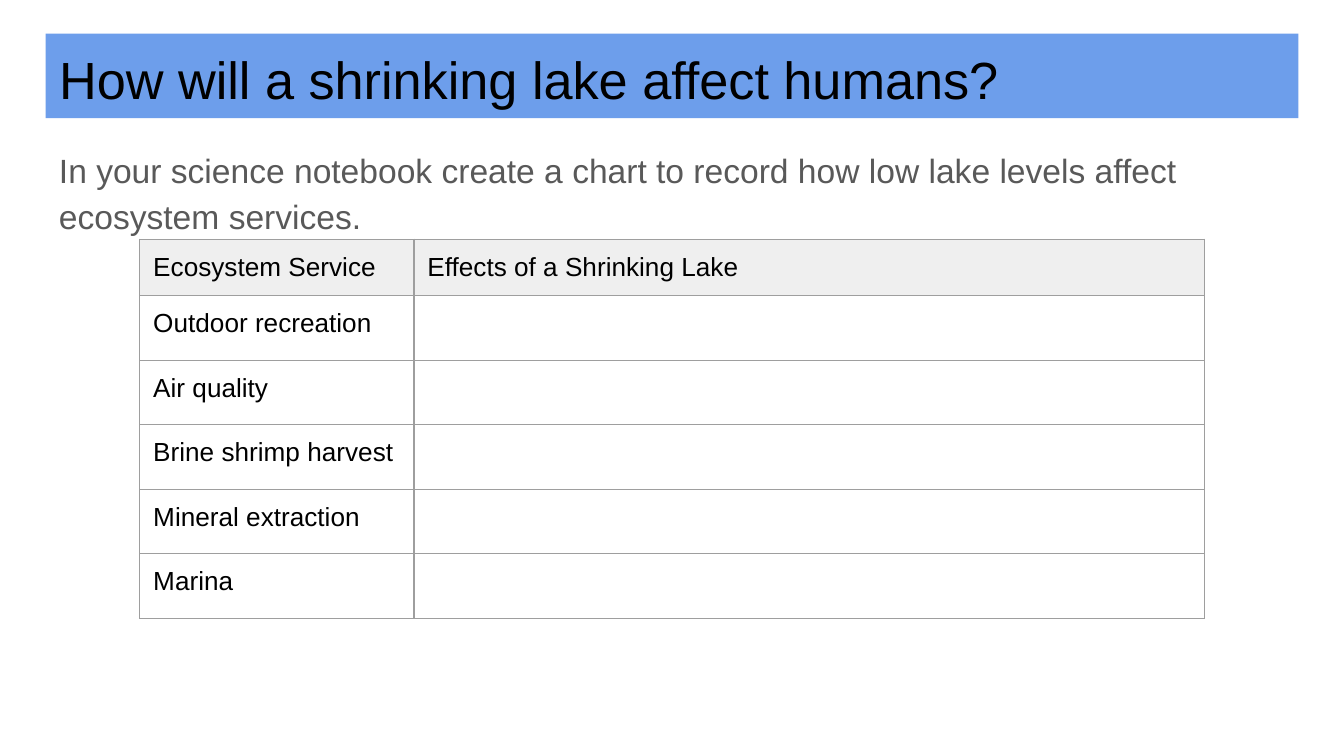
from dataclasses import dataclass

from lxml import etree
from pptx import Presentation
from pptx.dml.color import RGBColor
from pptx.enum.text import MSO_ANCHOR, MSO_AUTO_SIZE, PP_ALIGN
from pptx.oxml.ns import qn
from pptx.util import Inches, Pt

TOP = MSO_ANCHOR.TOP
NO_AUTOFIT = MSO_AUTO_SIZE.NONE
LEFT = PP_ALIGN.LEFT
TITLE_ONLY = 5


@dataclass(frozen=True)
class Theme:
    font: str = "Arial"
    black: str = "000000"
    grey: str = "595959"
    banner: str = "6D9EEB"
    header: str = "EFEFEF"
    border: str = "9E9E9E"
    title_size: int = 28
    body_size: int = 18
    cell_size: int = 14
    border_width: float = 0.75
    padding: float = 0.1


THEME = Theme()
SLIDE_WIDTH = Inches(10)
SLIDE_HEIGHT = SLIDE_WIDTH * 9 // 16
MARGIN = 0.34
CONTENT_WIDTH = 9.32
COLUMN_WIDTHS = (2.04, 5.88)
HEADER_HEIGHT = 0.42
ROW_HEIGHT = 0.48
HEADINGS = ("Ecosystem Service", "Effects of a Shrinking Lake")
SERVICES = (
    "Outdoor recreation",
    "Air quality",
    "Brine shrimp harvest",
    "Mineral extraction",
    "Marina",
)


def write_text(frame, text, *, size, color=THEME.black, line_spacing=1.0, space_after=0):
    """Put one formatted paragraph into a text frame."""
    paragraph = frame.paragraphs[0]
    paragraph.alignment = LEFT
    paragraph.line_spacing = line_spacing
    paragraph.space_after = Pt(space_after)
    run = paragraph.add_run()
    run.text = text
    run.font.name = THEME.font
    run.font.size = Pt(size)
    run.font.color.rgb = RGBColor.from_string(color)


def pad(target):
    """Give a text frame or a table cell equal margins and top alignment."""
    target.margin_left = target.margin_right = Inches(THEME.padding)
    target.margin_top = target.margin_bottom = Inches(THEME.padding)
    target.vertical_anchor = TOP


def prepare_frame(frame):
    pad(frame)
    frame.word_wrap = True
    frame.auto_size = NO_AUTOFIT


def add_title(slide, text):
    title = slide.shapes.title
    title.left, title.top = Inches(MARGIN), Inches(0.25)
    title.width, title.height = Inches(CONTENT_WIDTH), Inches(0.63)
    title.fill.solid()
    title.fill.fore_color.rgb = RGBColor.from_string(THEME.banner)
    prepare_frame(title.text_frame)
    write_text(title.text_frame, text, size=THEME.title_size)


def add_instruction(slide, text):
    box = slide.shapes.add_textbox(
        Inches(MARGIN), Inches(0.97), Inches(CONTENT_WIDTH), Inches(4.16)
    )
    prepare_frame(box.text_frame)
    write_text(box.text_frame, text, size=THEME.body_size, color=THEME.grey,
               line_spacing=1.15, space_after=16)


def set_borders(cell):
    """Draw all four cell edges; they must come before the fill in the XML."""
    properties = cell._tc.get_or_add_tcPr()
    for index, edge in enumerate(("a:lnL", "a:lnR", "a:lnT", "a:lnB")):
        line = etree.Element(qn(edge), w=str(Pt(THEME.border_width)))
        fill = etree.SubElement(line, qn("a:solidFill"))
        etree.SubElement(fill, qn("a:srgbClr"), val=THEME.border)
        properties.insert(index, line)


def set_empty_size(cell, size):
    """Size the blank line of an empty cell, so that it does not stretch its row."""
    paragraph = cell.text_frame.paragraphs[0]
    etree.SubElement(paragraph._p, qn("a:endParaRPr"), sz=str(size * 100))


def format_cell(cell, text, is_header):
    pad(cell)
    if is_header:
        cell.fill.solid()
        cell.fill.fore_color.rgb = RGBColor.from_string(THEME.header)
    else:
        cell.fill.background()
    set_borders(cell)
    if text:
        write_text(cell.text_frame, text, size=THEME.cell_size)
    else:
        set_empty_size(cell, THEME.cell_size)


def add_service_table(slide, rows):
    height = HEADER_HEIGHT + ROW_HEIGHT * (len(rows) - 1)
    table = slide.shapes.add_table(
        len(rows), len(COLUMN_WIDTHS), Inches(1.04), Inches(1.78),
        Inches(sum(COLUMN_WIDTHS)), Inches(height),
    ).table
    table.first_row = False
    table.horz_banding = False
    for column, width in zip(table.columns, COLUMN_WIDTHS):
        column.width = Inches(width)
    for row_index, texts in enumerate(rows):
        is_header = row_index == 0
        table.rows[row_index].height = Inches(HEADER_HEIGHT if is_header else ROW_HEIGHT)
        for column_index, text in enumerate(texts):
            format_cell(table.cell(row_index, column_index), text, is_header)


def main():
    presentation = Presentation()
    presentation.slide_width = SLIDE_WIDTH
    presentation.slide_height = SLIDE_HEIGHT
    slide = presentation.slides.add_slide(presentation.slide_layouts[TITLE_ONLY])

    # Heading and task
    add_title(slide, "How will a shrinking lake affect humans?")
    add_instruction(
        slide,
        "In your science notebook create a chart to record how low lake levels "
        "affect ecosystem services.",
    )

    # Chart to fill in: the effects column stays empty
    add_service_table(slide, [HEADINGS] + [(service, "") for service in SERVICES])

    presentation.save("out.pptx")


if __name__ == "__main__":
    main()
